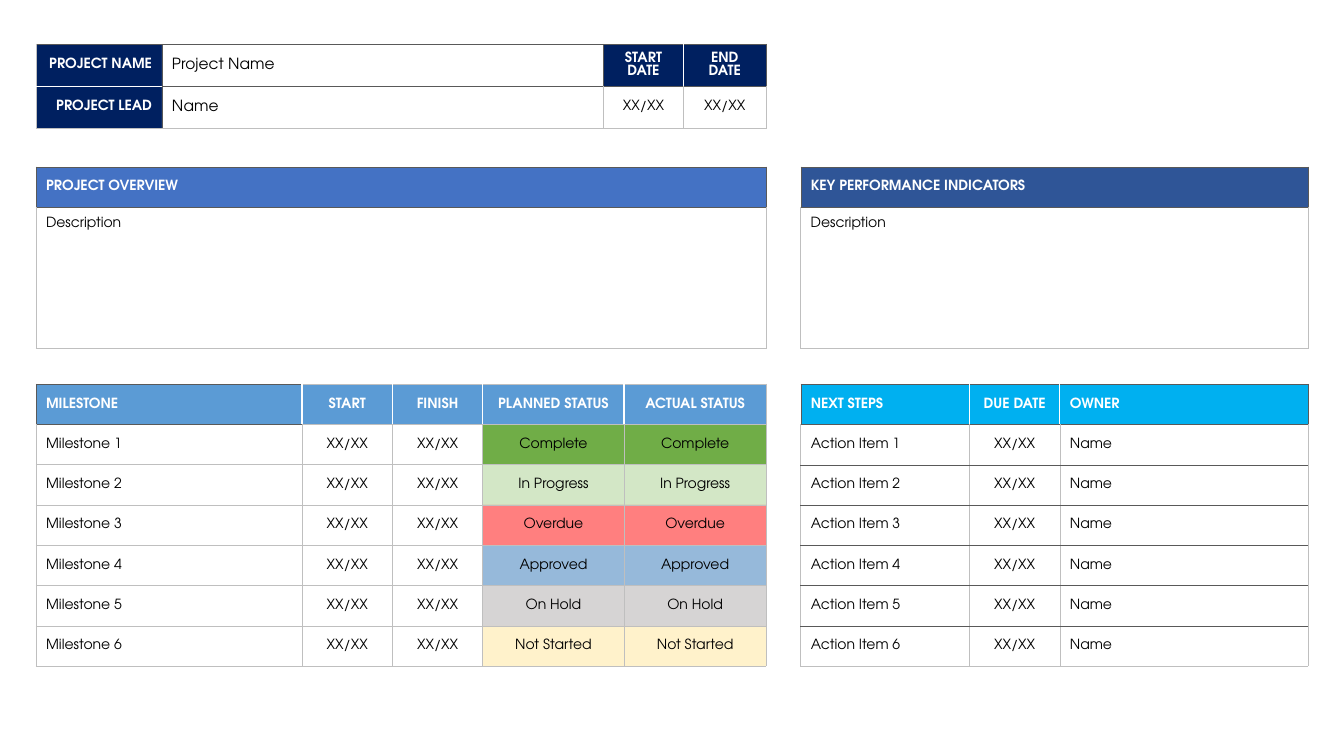
from lxml.etree import SubElement
from pptx import Presentation
from pptx.dml.color import RGBColor
from pptx.enum.text import MSO_ANCHOR, PP_ALIGN
from pptx.oxml import parse_xml
from pptx.oxml.ns import nsdecls, qn
from pptx.util import Cm, Pt

FONT = "TeX Gyre Adventor"
WHITE, BLACK, NAVY = "FFFFFF", "000000", "002060"
PALE, DARK, BOLD = ("BFBFBF", 0.5), ("595959", 0.25), ("FFFFFF", 1)
SIDES = "LRTB"
DATE = "XX/XX"
STATES = [("Complete", "70AD47", 100), ("In Progress", "A9D18E", 50),
          ("Overdue", "FF0000", 50), ("Approved", "2E75B6", 50),
          ("On Hold", "AFABAB", 50), ("Not Started", "FFE699", 50)]


def color(code):
    return RGBColor.from_string(code)


def paint(cell, code, alpha=100):
    """Replace the fill of a cell, along with any earlier transparency."""
    cell.fill.background()
    cell.fill.solid()
    cell.fill.fore_color.rgb = color(code)
    if alpha < 100:
        solid = cell._tc.tcPr.find(qn("a:solidFill"))
        tint = solid.find(qn("a:srgbClr"))
        SubElement(tint, qn("a:alpha"), val=str(alpha * 1000))


def edge(cell, sides, line):
    """Set the given sides, keeping the border elements in schema order."""
    code, width = line
    props = cell._tc.get_or_add_tcPr()
    for side in sides:
        old = props.find(qn("a:ln" + side))
        if old is not None:
            props.remove(old)
        before = [props.find(qn("a:ln" + s)) for s in SIDES[:SIDES.index(side)]]
        place = sum(item is not None for item in before)
        props.insert(place, parse_xml(
            f'<a:ln{side} {nsdecls("a")} w="{Pt(width)}"><a:solidFill>'
            f'<a:srgbClr val="{code}"/></a:solidFill></a:ln{side}>'))


def style(cell, code=BLACK, size=10, bold=False, align=PP_ALIGN.LEFT):
    cell.vertical_anchor = MSO_ANCHOR.MIDDLE
    for para in cell.text_frame.paragraphs:
        para.alignment = align
        for run in para.runs:
            font = run.font
            font.name, font.size, font.bold = FONT, Pt(size), bold
            font.color.rgb = color(code)


def head(cell, code, align=PP_ALIGN.LEFT):
    style(cell, WHITE, bold=True, align=align)
    paint(cell, code)


def pad(cell, side, top, bottom):
    cell.margin_left = cell.margin_right = Cm(side)
    cell.margin_top, cell.margin_bottom = Cm(top), Cm(bottom)


def grid(slide, box, cols, rows, texts):
    """Add a table of plain cells with pale borders."""
    frame = slide.shapes.add_table(len(rows), len(cols), *map(Cm, box))
    table = frame.table
    table.first_row = table.horz_banding = False
    for col, width in zip(table.columns, cols):
        col.width = Cm(width)
    for row, height, line in zip(table.rows, rows, texts):
        row.height = Cm(height)
        for cell, text in zip(row.cells, line):
            cell.text_frame.text = text
            style(cell)
            paint(cell, WHITE, 50)
            edge(cell, SIDES, PALE)
    return table


def project(slide, box):
    left, top, width, height = box
    cols = [3.17, 11.13, 2.01]
    cols.append(width - sum(cols))
    table = grid(slide, box, cols, [height / 2] * 2,
                 [["PROJECT NAME", "Project Name", "START DATE", "END DATE"],
                  ["PROJECT LEAD", "Name", DATE, DATE]])
    for row in range(2):
        label, name = table.cell(row, 0), table.cell(row, 1)
        head(label, NAVY, PP_ALIGN.RIGHT)
        edge(label, "RT", DARK)
        style(name, size=11)
        edge(name, "LT", DARK)
    edge(table.cell(0, 0), "B", BOLD)
    edge(table.cell(1, 0), "T", BOLD)
    edge(table.cell(0, 1), "RB", DARK)
    for col in (2, 3):
        title, date = table.cell(0, col), table.cell(1, col)
        head(title, NAVY, PP_ALIGN.CENTER)
        pad(title, 0.25, 0, 0)
        edge(title, SIDES, DARK)
        style(date, align=PP_ALIGN.CENTER)
        edge(date, "T", DARK)
    edge(table.cell(0, 2), "R", BOLD)
    edge(table.cell(0, 3), "L", BOLD)


def panel(slide, box, title, code):
    left, top, width, height = box
    bar = 1.02
    table = grid(slide, box, [width], [bar, height - bar],
                 [[title], ["Description"]])
    top_cell, body = table.cell(0, 0), table.cell(1, 0)
    head(top_cell, code)
    edge(top_cell, SIDES, DARK)
    body.vertical_anchor = MSO_ANCHOR.TOP
    pad(body, 0.25, 0.25, 0.13)
    edge(body, "T", DARK)


def listing(slide, box, cols, texts, code, mid):
    """Add a table with a header row, centring the columns in mid."""
    left, top, width, height = box
    cols = [width - sum(cols)] + cols
    count = len(texts)
    table = grid(slide, box, cols, [height / count] * count, texts)
    last = len(cols) - 1
    for col in range(last + 1):
        title = table.cell(0, col)
        head(title, code, PP_ALIGN.CENTER if col in mid else PP_ALIGN.LEFT)
        if col > 0:
            edge(title, "L", BOLD)
        if col < last:
            edge(title, "R", BOLD)
    for row in range(1, count):
        for col in mid:
            cell = table.cell(row, col)
            style(cell, align=PP_ALIGN.CENTER)
            pad(cell, 0, 0, 0)
    return table


def plan(slide, box):
    texts = [["MILESTONE", "START", "FINISH", "PLANNED STATUS", "ACTUAL STATUS"]]
    texts += [[f"Milestone {num}", DATE, DATE, state[0], state[0]]
              for num, state in enumerate(STATES, 1)]
    table = listing(slide, box, [2.28, 2.28, 3.56, 3.58], texts,
                    "5B9BD5", range(1, 5))
    edge(table.cell(0, 0), "LTB", DARK)
    edge(table.cell(1, 0), "T", DARK)
    for row, (_, code, alpha) in enumerate(STATES, 1):
        for col in (3, 4):
            paint(table.cell(row, col), code, alpha)


def steps(slide, box):
    texts = [["NEXT STEPS", "DUE DATE", "OWNER"]]
    texts += [[f"Action Item {num}", DATE, "Name"] for num in range(1, 7)]
    table = listing(slide, box, [2.28, 6.25], texts, "00B0F0", [1])
    end = len(texts) - 1
    for row in range(end + 1):
        for col in range(3):
            edge(table.cell(row, col), "T" if row == end else "TB", DARK)
    edge(table.cell(0, 0), "L", DARK)
    edge(table.cell(0, 2), "R", DARK)


def main():
    deck = Presentation()
    deck.slide_width, deck.slide_height = Cm(33.87), Cm(19.05)
    slide = deck.slides.add_slide(deck.slide_layouts[6])
    left, wide = 0.91, 18.4
    right, slim = 20.18, 12.78
    plan(slide, (left, 9.68, wide, 7.11))
    project(slide, (left, 1.11, wide, 2.12))
    panel(slide, (left, 4.2, wide, 4.58), "PROJECT OVERVIEW", "4472C4")
    steps(slide, (right, 9.68, slim, 7.11))
    panel(slide, (right, 4.2, slim, 4.58), "KEY PERFORMANCE INDICATORS", "2F5597")
    deck.save("out.pptx")


if __name__ == "__main__":
    main()
